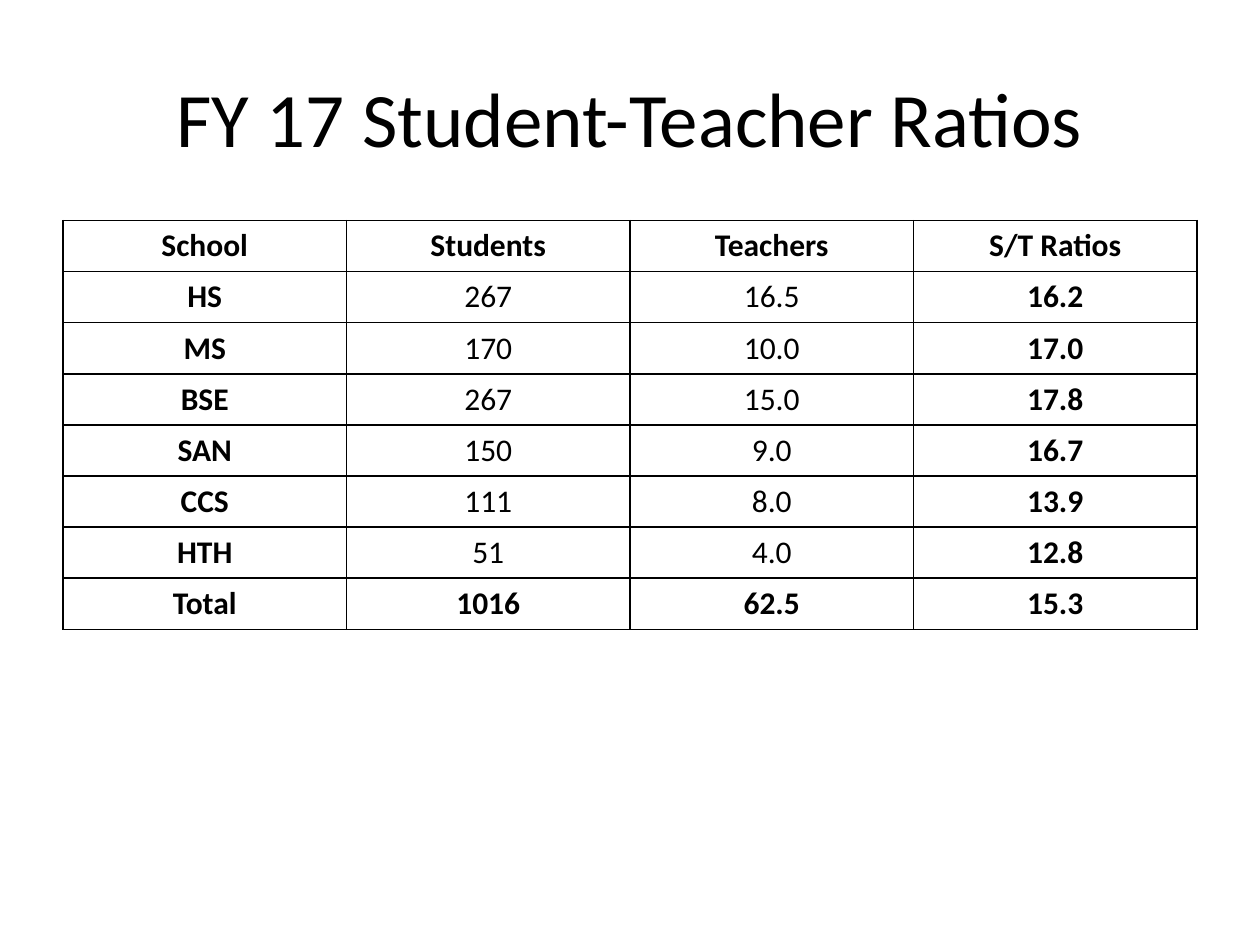
import pptx
import pptx.util
import pptx.dml.color
import pptx.enum.text
import lxml.etree

TITLE = "FY 17 Student-Teacher Ratios"
ROWS = [
    ("School", "Students", "Teachers", "S/T Ratios"),
    ("HS", "267", "16.5", "16.2"),
    ("MS", "170", "10.0", "17.0"),
    ("BSE", "267", "15.0", "17.8"),
    ("SAN", "150", "9.0", "16.7"),
    ("CCS", "111", "8.0", "13.9"),
    ("HTH", "51", "4.0", "12.8"),
    ("Total", "1016", "62.5", "15.3"),
]
FONT = "Calibri"
BLACK = pptx.dml.color.RGBColor(0, 0, 0)
WHITE = pptx.dml.color.RGBColor(255, 255, 255)
NS = "{http://schemas.openxmlformats.org/drawingml/2006/main}"
Inches = pptx.util.Inches
Pt = pptx.util.Pt


def write(frame, text, size, bold):
    frame.vertical_anchor = pptx.enum.text.MSO_ANCHOR.MIDDLE
    para = frame.paragraphs[0]
    para.alignment = pptx.enum.text.PP_ALIGN.CENTER
    run = para.add_run()
    run.text = text
    run.font.name = FONT
    run.font.size = Pt(size)
    run.font.bold = bold
    run.font.color.rgb = BLACK


def border(cell):
    props = cell._tc.get_or_add_tcPr()
    for side in ("lnL", "lnR", "lnT", "lnB"):
        line = lxml.etree.SubElement(props, NS + side, w=str(Pt(1)))
        fill = lxml.etree.SubElement(line, NS + "solidFill")
        lxml.etree.SubElement(fill, NS + "srgbClr", val=str(BLACK))


def main():
    deck = pptx.Presentation()
    deck.slide_width, deck.slide_height = Inches(10), Inches(7.5)
    slide = deck.slides.add_slide(deck.slide_layouts[5])

    title = slide.shapes.title
    title.left, title.top = Inches(0.5), Inches(0.3)
    title.width, title.height = Inches(9), Inches(1.25)
    write(title.text_frame, TITLE, 44, False)

    table = slide.shapes.add_table(
        len(ROWS), len(ROWS[0]),
        Inches(0.5), Inches(1.75), Inches(9), Inches(3.24),
    ).table
    table.first_row = False
    table.horz_banding = False
    last = len(ROWS) - 1
    for r, row in enumerate(ROWS):
        for c, text in enumerate(row):
            cell = table.cell(r, c)
            border(cell)
            cell.fill.solid()
            cell.fill.fore_color.rgb = WHITE
            write(cell.text_frame, text, 18, r in (0, last) or c in (0, 3))
            cell.vertical_anchor = pptx.enum.text.MSO_ANCHOR.TOP

    deck.save("out.pptx")


if __name__ == "__main__":
    main()
